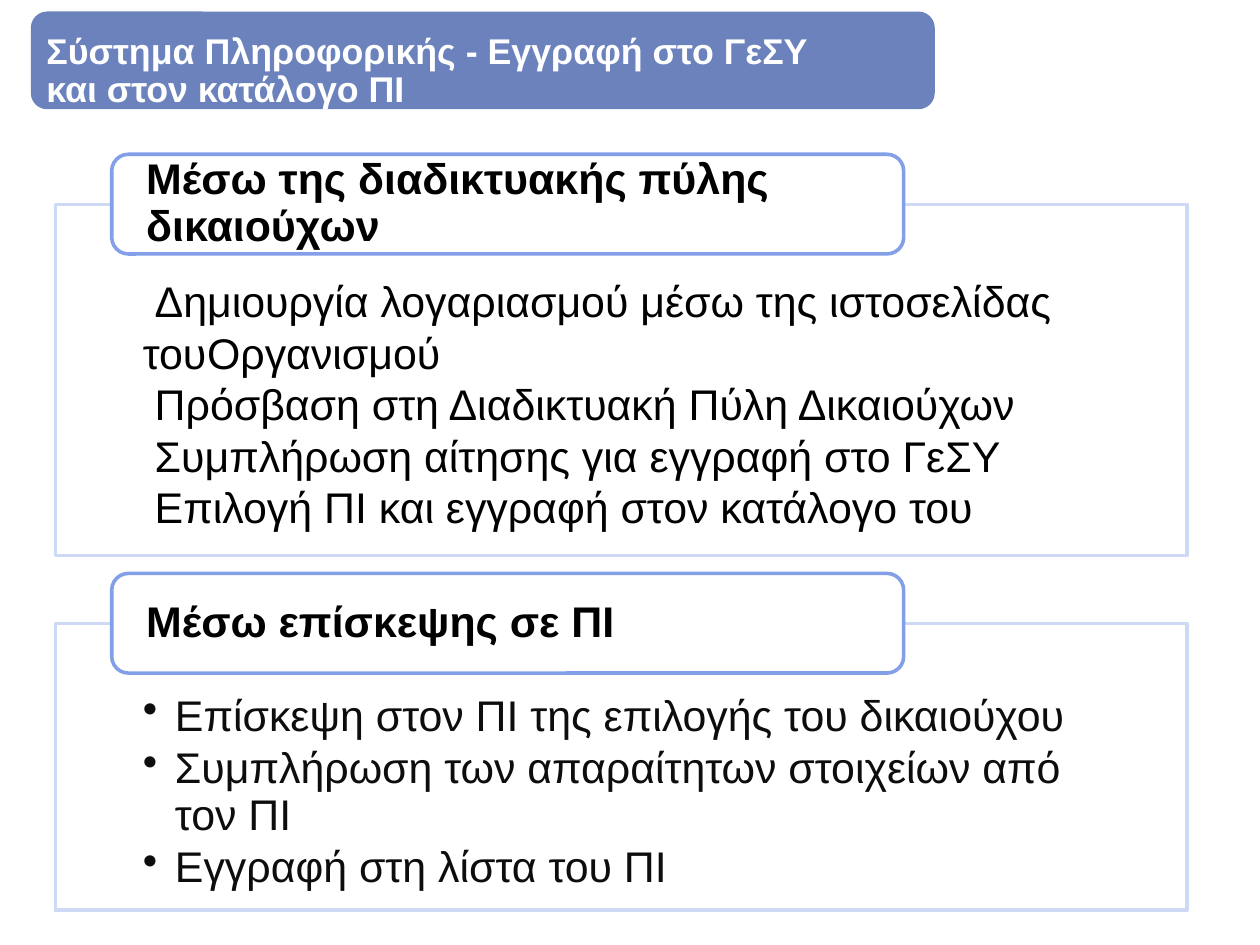
from lxml.etree import SubElement
from pptx import Presentation
from pptx.dml.color import RGBColor
from pptx.enum.shapes import MSO_SHAPE as Shape
from pptx.enum.text import MSO_ANCHOR as Anchor, PP_ALIGN as Align
from pptx.oxml.ns import qn
from pptx.util import Pt

WHITE = RGBColor(0xFF, 0xFF, 0xFF)
BLACK = RGBColor(0x00, 0x00, 0x00)
INK = RGBColor(0x0D, 0x0D, 0x0D)
TITLE_BLUE = RGBColor(0x6B, 0x82, 0xBD)
HEADER_BLUE = RGBColor(0x83, 0x9F, 0xE7)
PANEL_BLUE = RGBColor(0xCD, 0xD9, 0xF5)


def add_box(kind, bounds, fill, line, margins, anchor):
    box = page.shapes.add_shape(kind, *[Pt(value) for value in bounds])
    box.shadow.inherit = False
    box.fill.solid()
    box.fill.fore_color.rgb = fill
    if line is None:
        box.line.fill.background()
    else:
        box.line.color.rgb = line
        box.line.width = Pt(2)
    frame = box.text_frame
    frame.word_wrap = True
    frame.vertical_anchor = anchor
    frame.margin_left, frame.margin_top, frame.margin_right, frame.margin_bottom = [
        Pt(value) for value in margins
    ]
    return frame


def add_line(frame, index, text, size, color, bold=False, spacing=0.9):
    para = frame.paragraphs[0] if index == 0 else frame.add_paragraph()
    para.alignment = Align.LEFT
    para.line_spacing = spacing
    span = para.add_run()
    span.text = text
    span.font.name = "Arial"
    span.font.size = Pt(size)
    span.font.bold = bold
    span.font.color.rgb = color
    return para


deck = Presentation()
deck.slide_width = Pt(705.6)
deck.slide_height = Pt(529.2)
page = deck.slides.add_slide(deck.slide_layouts[6])

title = add_box(Shape.ROUNDED_RECTANGLE, (17.3, 6.5, 506.2, 54.7),
                TITLE_BLUE, None, (6, 9.6, 6, 0), Anchor.TOP)
title_lines = ["Σύστημα Πληροφορικής - Εγγραφή στο ΓεΣΥ", "και στον κατάλογο ΠΙ"]
for index, text in enumerate(title_lines):
    add_line(title, index, text, 20, WHITE, bold=True)

sections = [
    (114.5, 196.6, "Μέσω της διαδικτυακής πύλης δικαιούχων", False, BLACK, [
        "Δημιουργία λογαριασμού μέσω της ιστοσελίδας του\tΟργανισμού",
        "Πρόσβαση στη Διαδικτυακή Πύλη Δικαιούχων",
        "Συμπλήρωση αίτησης για εγγραφή στο ΓεΣΥ",
        "Επιλογή ΠΙ και εγγραφή στον κατάλογο του",
    ]),
    (349.2, 160.6, "Μέσω επίσκεψης σε ΠΙ", True, INK, [
        "Επίσκεψη στον ΠΙ της επιλογής του δικαιούχου",
        "Συμπλήρωση των απαραίτητων στοιχείων από τον ΠΙ",
        "Εγγραφή στη λίστα του ΠΙ",
    ]),
]

for top, height, heading, bulleted, color, steps in sections:
    panel = add_box(Shape.RECTANGLE, (31, top, 633.6, height),
                    WHITE, PANEL_BLUE, (49, 39.6, 49, 13.7), Anchor.TOP)
    for index, step in enumerate(steps):
        para = add_line(panel, index, step, 24, color, spacing=0.9 if bulleted else 1.0)
        props = para._p.get_or_add_pPr()
        if bulleted:
            para.space_after = Pt(3.6)
            props.set("marL", str(Pt(18)))
            props.set("indent", str(-Pt(18)))
            SubElement(props, qn("a:buChar"), char="•")
        else:
            props.set("marL", "0")
            props.set("indent", str(Pt(6.67)))
            if "\t" in step:
                tabs = SubElement(props, qn("a:tabLst"))
                SubElement(tabs, qn("a:tab"), pos=str(Pt(62.5)), algn="l")

    header = add_box(Shape.ROUNDED_RECTANGLE, (62.6, top - 28.1, 443.5, 55.8),
                     WHITE, HEADER_BLUE, (16.6, 0, 16.6, 0), Anchor.MIDDLE)
    add_line(header, 0, heading, 24, BLACK, bold=True)

deck.save("out.pptx")
